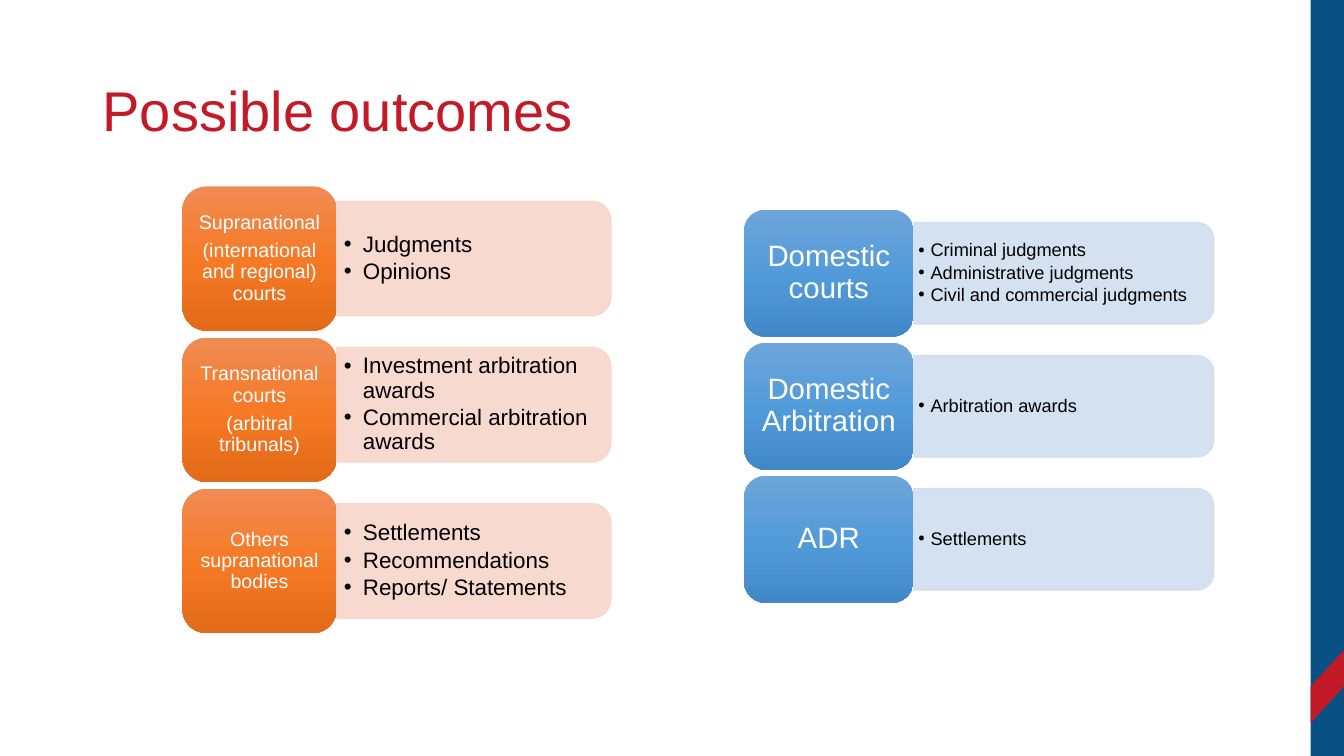
from copy import deepcopy
from dataclasses import dataclass

from lxml.etree import SubElement
from pptx import Presentation
from pptx.dml.color import RGBColor
from pptx.enum.shapes import MSO_SHAPE
from pptx.enum.text import MSO_ANCHOR, PP_ALIGN
from pptx.oxml.ns import qn
from pptx.util import Inches, Pt


@dataclass(frozen=True)
class Theme:
    font: str = "Arial"
    red: str = "C41927"
    navy: str = "095184"
    white: str = "FFFFFF"
    black: str = "000000"
    orange: tuple = ("F08B54", "F67A26", "E36A18")
    peach: str = "F7D5CB"
    blue: tuple = ("6EA5DA", "529BDA", "4188C8")
    pale_blue: str = "CFDEEF"
    title_size: float = 40
    supranational_tile_size: float = 14
    supranational_bullet_size: float = 16
    domestic_tile_size: float = 21
    domestic_bullet_size: float = 13


@dataclass(frozen=True)
class Column:
    left: float
    top: float
    step: float
    tile_width: float
    tile_height: float
    panel_width: float
    panel_height: float
    tile_colors: tuple
    panel_color: str
    tile_size: float
    tile_inset: tuple
    tile_gap: float
    bullet_size: float
    bullet_inset: float
    bullet_indent: float
    bullet_gap: float


class OutcomeSlide:
    def __init__(self, slide, theme):
        self.slide = slide
        self.theme = theme

    def shape(self, kind, left, top, width, height, color=None):
        shape = self.slide.shapes.add_shape(
            kind, Inches(left), Inches(top), Inches(width), Inches(height))
        shape.shadow.inherit = False
        shape.line.fill.background()
        if color:
            shape.fill.solid()
            shape.fill.fore_color.rgb = RGBColor.from_string(color)
        return shape

    def frame(self, shape, horizontal, vertical):
        frame = shape.text_frame
        frame.word_wrap = True
        frame.vertical_anchor = MSO_ANCHOR.MIDDLE
        frame.margin_left = frame.margin_right = Inches(horizontal)
        frame.margin_top = frame.margin_bottom = Inches(vertical)
        return frame

    def text_box(self, left, top, width, height, horizontal, vertical):
        box = self.slide.shapes.add_textbox(
            Inches(left), Inches(top), Inches(width), Inches(height))
        return self.frame(box, horizontal, vertical)

    def paragraphs(self, frame, lines, size, color, gap=0, align=PP_ALIGN.LEFT, indent=None):
        for index, line in enumerate(lines):
            paragraph = frame.add_paragraph() if index else frame.paragraphs[0]
            paragraph.text = line
            if indent:
                self.bullet(paragraph, indent, color)
            paragraph.alignment = align
            paragraph.line_spacing = 0.9
            if index:
                paragraph.space_before = Pt(gap)
            paragraph.font.name = self.theme.font
            paragraph.font.size = Pt(size)
            paragraph.font.color.rgb = RGBColor.from_string(color)

    def bullet(self, paragraph, indent, color):
        paragraph.level = 1
        properties = paragraph._p.get_or_add_pPr()
        properties.set("marL", str(Inches(indent)))
        properties.set("indent", str(-Inches(indent)))
        bullet_color = SubElement(properties, qn("a:buClr"))
        SubElement(bullet_color, qn("a:srgbClr"), val=color)
        SubElement(properties, qn("a:buFont"), typeface=self.theme.font)
        SubElement(properties, qn("a:buChar"), char="•")

    def title(self, text):
        frame = self.text_box(0.92, 0.4, 11.5, 1.45, 0.1, 0.05)
        self.paragraphs(frame, [text], self.theme.title_size, self.theme.red)

    def side_band(self):
        self.shape(MSO_SHAPE.RECTANGLE, 13, 0, 0.33, 7.5, self.theme.navy)
        for top, rotation in ((6.81, 180), (6.45, 0)):
            triangle = self.shape(
                MSO_SHAPE.RIGHT_TRIANGLE, 13, top, 0.33, 0.36, self.theme.red)
            triangle.rotation = rotation
            triangle._element.spPr.xfrm.set("flipH", "1")

    def tile(self, column, top, lines):
        tile = self.shape(MSO_SHAPE.ROUNDED_RECTANGLE, column.left, top,
                          column.tile_width, column.tile_height)
        tile.adjustments[0] = 0.167
        tile.fill.gradient()
        tile.fill.gradient_angle = 270
        stop_list = tile._element.spPr.find(".//" + qn("a:gsLst"))
        stop_list.append(deepcopy(stop_list[0]))
        for index, (stop, color) in enumerate(zip(tile.fill.gradient_stops, column.tile_colors)):
            stop.position = index / 2
            stop.color.rgb = RGBColor.from_string(color)
        self.paragraphs(self.frame(tile, *column.tile_inset), lines, column.tile_size,
                        self.theme.white, column.tile_gap, PP_ALIGN.CENTER)

    def panel(self, column, middle, lines):
        left = column.left + column.tile_width
        width, height = column.panel_width, column.panel_height
        panel = self.shape(MSO_SHAPE.ROUND_2_SAME_RECTANGLE,
                           left + (width - height) / 2, middle - width / 2,
                           height, width, column.panel_color)
        panel.rotation = 90
        panel.adjustments[0] = 0.167
        panel.adjustments[1] = 0
        panel.line.color.rgb = RGBColor.from_string(column.panel_color)
        panel.line.width = Pt(0.75)
        for color in panel._element.spPr.findall(".//" + qn("a:srgbClr")):
            SubElement(color, qn("a:alpha"), val="90000")
        frame = self.text_box(left, middle - height / 2 + 0.05, width - 0.05,
                              height - 0.1, column.bullet_inset, 0.03)
        self.paragraphs(frame, lines, column.bullet_size, self.theme.black,
                        column.bullet_gap, indent=column.bullet_indent)

    def column(self, column, rows):
        for index, (heading, outcomes, shift) in enumerate(rows):
            top = column.top + index * column.step
            self.panel(column, top + column.tile_height / 2 + shift, outcomes)
            self.tile(column, top, heading)


def main():
    presentation = Presentation()
    presentation.slide_width = Inches(13.33)
    presentation.slide_height = Inches(7.5)
    theme = Theme()
    slide = OutcomeSlide(presentation.slides.add_slide(presentation.slide_layouts[6]), theme)
    slide.side_band()
    slide.title("Possible outcomes")

    supranational = Column(
        left=1.81, top=1.85, step=1.5, tile_width=1.53, tile_height=1.43,
        panel_width=2.72, panel_height=1.14, tile_colors=theme.orange,
        panel_color=theme.peach, tile_size=theme.supranational_tile_size,
        tile_inset=(0.06, 0.03), tile_gap=4.9, bullet_size=theme.supranational_bullet_size,
        bullet_inset=0.07, bullet_indent=0.19, bullet_gap=2.4)
    domestic = Column(
        left=7.38, top=2.08, step=1.32, tile_width=1.68, tile_height=1.26,
        panel_width=2.98, panel_height=1.01, tile_colors=theme.blue,
        panel_color=theme.pale_blue, tile_size=theme.domestic_tile_size,
        tile_inset=(0.09, 0.04), tile_gap=0, bullet_size=theme.domestic_bullet_size,
        bullet_inset=0.05, bullet_indent=0.12, bullet_gap=1.9)

    slide.column(supranational, [
        (["Supranational", "(international and regional) courts"],
         ["Judgments", "Opinions"], 0),
        (["Transnational courts", "(arbitral tribunals)"],
         ["Investment arbitration awards", "Commercial arbitration awards"], -0.05),
        (["Others supranational bodies"],
         ["Settlements", "Recommendations", "Reports/ Statements"], 0),
    ])
    slide.column(domestic, [
        (["Domestic courts"],
         ["Criminal judgments", "Administrative judgments",
          "Civil and commercial judgments"], 0),
        (["Domestic Arbitration"], ["Arbitration awards"], 0),
        (["ADR"], ["Settlements"], 0),
    ])
    presentation.save("out.pptx")


if __name__ == "__main__":
    main()
